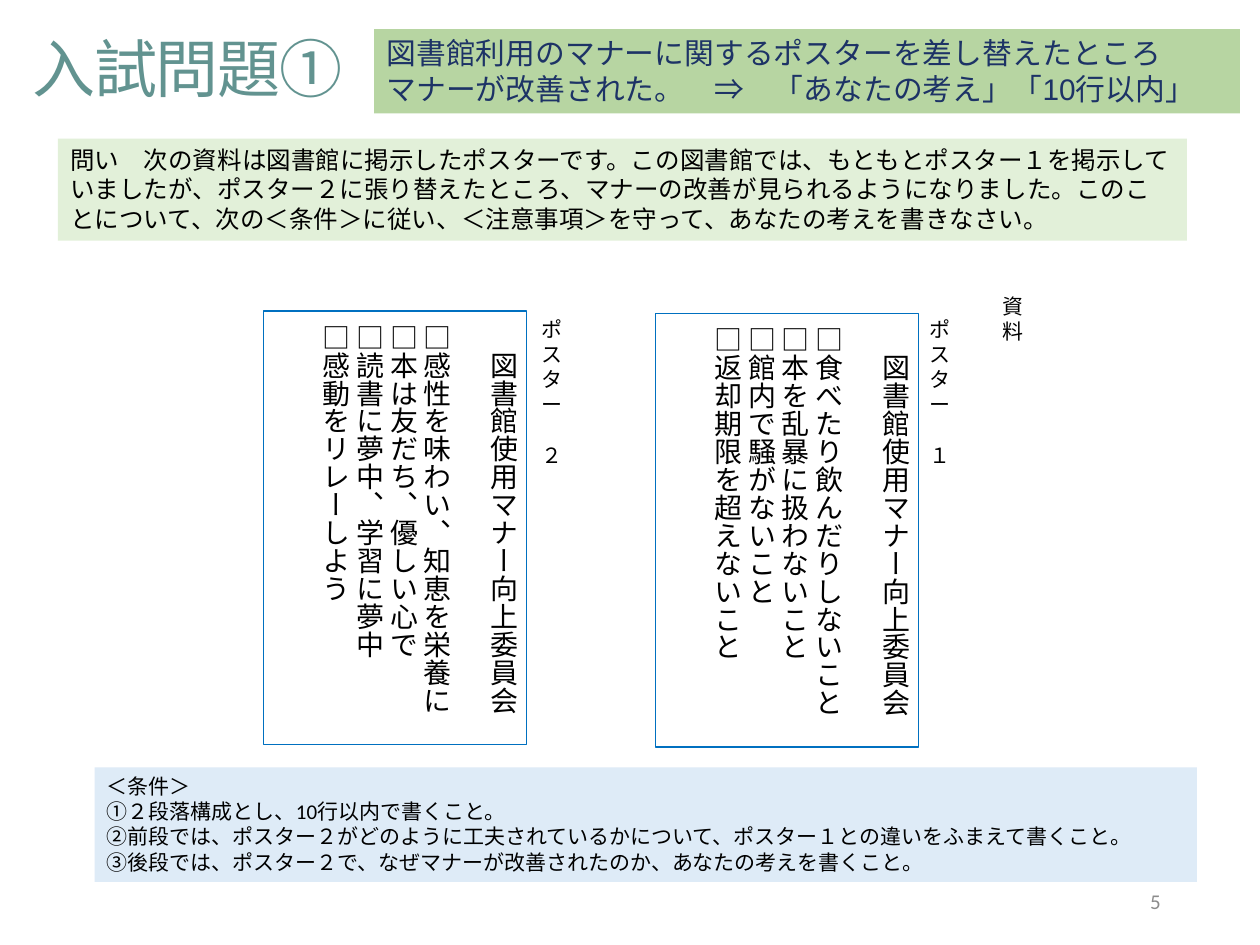
from lxml import etree
from pptx import Presentation
from pptx.dml.color import RGBColor
from pptx.enum.shapes import MSO_SHAPE
from pptx.enum.text import MSO_ANCHOR, PP_ALIGN
from pptx.oxml.ns import qn
from pptx.util import Inches, Pt

RECTANGLE = MSO_SHAPE.RECTANGLE
LEFT, RIGHT = PP_ALIGN.LEFT, PP_ALIGN.RIGHT
TOP, MIDDLE = MSO_ANCHOR.TOP, MSO_ANCHOR.MIDDLE

presentation = Presentation()
presentation.slide_width = Inches(10)
presentation.slide_height = Inches(7.5)
slide = presentation.slides.add_slide(presentation.slide_layouts[5])
column = presentation.slide_width / 100
row = presentation.slide_height / 100


def color(value):
    return RGBColor.from_string(value)


def add_text(shape, lines, size, font="Calibri", ink="000000", align=LEFT,
             anchor=TOP, direction=None):
    frame = shape.text_frame
    frame.word_wrap = True
    frame.vertical_anchor = anchor
    frame.text = "\n".join(lines)
    if direction:
        frame._txBody.bodyPr.set("vert", direction)
    for paragraph in frame.paragraphs:
        paragraph.alignment = align
        paragraph.font.size = Pt(size)
        paragraph.font.name = font
        paragraph.font.color.rgb = color(ink)


title = slide.shapes.title
title.left, title.top = int(1.6 * column), int(2.4 * row)
title.width, title.height = int(93.3 * column), int(9.47 * row)
add_text(title, ["入試問題①"], 36, "Noto Sans CJK JP", "629390", anchor=MIDDLE)
title.text_frame.paragraphs[0].runs[0].font._element.set("spc", "-80")

panels = [
    (4.6, 14.67, 89.6, 10.8, "E2F0D9", 14, "Calibri", "000000", [
        "問い　次の資料は図書館に掲示したポスターです。この図書館では、もともとポスター１を掲示して"
        "いましたが、ポスター２に張り替えたところ、マナーの改善が見られるようになりました。このこ"
        "とについて、次の＜条件＞に従い、＜注意事項＞を守って、あなたの考えを書きなさい。"]),
    (7.5, 81.2, 87.5, 12.13, "DEEBF7", 12, "Calibri", "000000", [
        "＜条件＞",
        "①２段落構成とし、10行以内で書くこと。",
        "②前段では、ポスター２がどのように工夫されているかについて、ポスター１との違いをふまえて書くこと。",
        "③後段では、ポスター２で、なぜマナーが改善されたのか、あなたの考えを書くこと。"]),
    (29.7, 3.07, 68.7, 8.93, "70AD47", 17, "Arial", "1D3366", [
        "図書館利用のマナーに関するポスターを差し替えたところ",
        "マナーが改善された。　⇒　「あなたの考え」「10行以内」"]),
]
for left, top, width, height, fill, size, font, ink, lines in panels:
    panel = slide.shapes.add_shape(RECTANGLE, int(left * column), int(top * row),
                                   int(width * column), int(height * row))
    panel.shadow.inherit = False
    panel.fill.solid()
    panel.fill.fore_color.rgb = color(fill)
    panel.line.fill.background()
    add_text(panel, lines, size, font, ink)

banner_color = panel._element.spPr.find(qn("a:solidFill")).find(qn("a:srgbClr"))
etree.SubElement(banner_color, qn("a:alpha"), val="50000")

posters = [
    (52, 33.2, ["□食べたり飲んだりしないこと", "□本を乱暴に扱わないこと",
                "□館内で騒がないこと", "□返却期限を超えないこと"]),
    (20.9, 32.93, ["□感性を味わい、知恵を栄養に", "□本は友だち、優しい心で",
                   "□読書に夢中、学習に夢中", "□感動をリレーしよう"]),
]
for left, top, rules in posters:
    poster = slide.shapes.add_shape(RECTANGLE, int(left * column), int(top * row),
                                    int(20.9 * column), int(45.87 * row))
    poster.shadow.inherit = False
    poster.fill.background()
    poster.line.color.rgb = color("0070C0")
    poster.line.width = Pt(0.75)
    add_text(poster, ["　図書館使用マナー向上委員会", *rules], 16, direction="eaVert")
    poster.text_frame.paragraphs[1].space_before = Pt(19.2)

labels = [(42, 32.8, "ポスター　２"), (72.8, 32.8, "ポスター　１"), (78.6, 30.4, "資料")]
for left, top, text in labels:
    label = slide.shapes.add_textbox(int(left * column), int(top * row),
                                     int(5 * column), int(24.27 * row))
    add_text(label, [text], 12, direction="wordArtVertRtl")

page_number = slide.shapes.add_textbox(int(70.6 * column), int(92.67 * row),
                                       int(22.5 * column), int(5.33 * row))
add_text(page_number, ["5"], 12, ink="8C8C8C", align=RIGHT, anchor=MIDDLE)

presentation.save("out.pptx")
